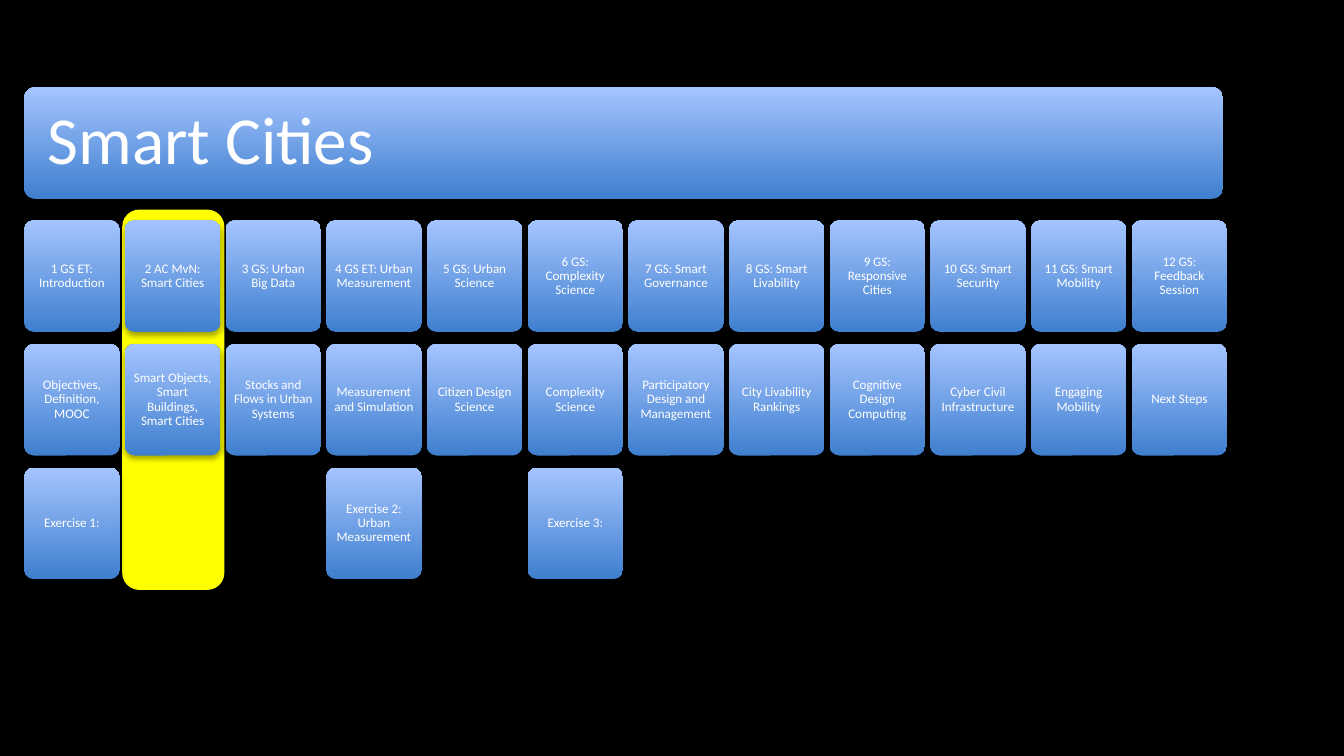
import pptx
import pptx.util
import pptx.dml.color
import pptx.enum.shapes
import pptx.enum.text
import pptx.oxml

Inches = pptx.util.Inches
Pt = pptx.util.Pt
RGBColor = pptx.dml.color.RGBColor
ALIGN = pptx.enum.text.PP_ALIGN

BLACK = RGBColor(0x00, 0x00, 0x00)
WHITE = RGBColor(0xFF, 0xFF, 0xFF)
YELLOW = RGBColor(0xFF, 0xFF, 0x00)
DEEP = RGBColor(0x3F, 0x7F, 0xCE)
PALE = RGBColor(0xA4, 0xC4, 0xFF)

TITLE = "Smart Cities"
# One entry per week: session, topic and, for some, an exercise
WEEKS = [
    ("1 GS ET: Introduction", "Objectives, Definition, MOOC", "Exercise 1:"),
    ("2 AC MvN: Smart Cities", "Smart Objects, Smart Buildings, Smart Cities"),
    ("3 GS: Urban Big Data", "Stocks and Flows in Urban Systems"),
    ("4 GS ET: Urban Measurement", "Measurement and Simulation",
     "Exercise 2: Urban Measurement"),
    ("5 GS: Urban Science", "Citizen Design Science"),
    ("6 GS: Complexity Science", "Complexity Science", "Exercise 3:"),
    ("7 GS: Smart Governance", "Participatory Design and Management"),
    ("8 GS: Smart Livability", "City Livability Rankings"),
    ("9 GS: Responsive Cities", "Cognitive Design Computing"),
    ("10 GS: Smart Security", "Cyber Civil Infrastructure"),
    ("11 GS: Smart Mobility", "Engaging Mobility"),
    ("12 GS: Feedback Session", "Next Steps"),
]

WIDE = 10
LEFT, RIGHT, TOP = 0.18, 9.13, 1.64
WIDTH, HEIGHT = 0.71, 0.83
STEP_X = (RIGHT - WIDTH - LEFT) / (len(WEEKS) - 1)
STEP_Y = 0.92

SHADOW = (
    '<a:outerShdw xmlns:a="http://schemas.openxmlformats.org/drawingml/2006/main"'
    f' blurRad="{Pt(3.1)}" dist="{Pt(1.8)}" dir="5400000" rotWithShape="0">'
    f'<a:srgbClr val="{BLACK}"><a:alpha val="35000"/></a:srgbClr></a:outerShdw>'
)


def add_card(slide, x, y, w, h):
    """Add a rounded box without outline and with a soft shadow below."""
    kind = pptx.enum.shapes.MSO_SHAPE.ROUNDED_RECTANGLE
    card = slide.shapes.add_shape(kind, Inches(x), Inches(y), Inches(w), Inches(h))
    card.line.fill.background()
    card.shadow.inherit = False
    card.element.spPr.effectLst.append(pptx.oxml.parse_xml(SHADOW))
    return card


def paint_blue(card):
    """Shade the card from pale at the top to deep at the bottom."""
    card.adjustments[0] = 0.1
    card.fill.gradient()
    card.fill.gradient_angle = 90
    for stop, color in zip(card.fill.gradient_stops, (DEEP, PALE)):
        stop.color.rgb = color


def write(card, text, size=7, align=ALIGN.CENTER, inset=0.03):
    frame = card.text_frame
    frame.word_wrap = True
    frame.vertical_anchor = pptx.enum.text.MSO_ANCHOR.MIDDLE
    frame.margin_left = frame.margin_right = Inches(inset)
    frame.margin_top = frame.margin_bottom = Inches(inset)
    para = frame.paragraphs[0]
    para.alignment = align
    para.line_spacing = 0.9
    run = para.add_run()
    run.text = text
    run.font.name = "Calibri"
    run.font.size = Pt(size)
    run.font.color.rgb = WHITE


def main():
    deck = pptx.Presentation()
    deck.slide_width, deck.slide_height = Inches(WIDE), Inches(WIDE * 9 / 16)
    slide = deck.slides.add_slide(deck.slide_layouts[6])
    slide.background.fill.solid()
    slide.background.fill.fore_color.rgb = BLACK

    marker = add_card(slide, 0.91, 1.56, 0.76, 2.83)
    marker.fill.solid()
    marker.fill.fore_color.rgb = YELLOW

    banner = add_card(slide, LEFT, 0.65, 8.92, HEIGHT)
    paint_blue(banner)
    write(banner, TITLE, size=36, align=ALIGN.LEFT, inset=0.15)

    for col, week in enumerate(WEEKS):
        for row, text in enumerate(week):
            card = add_card(slide, LEFT + col * STEP_X, TOP + row * STEP_Y,
                            WIDTH, HEIGHT)
            paint_blue(card)
            write(card, text)

    deck.save("out.pptx")


if __name__ == "__main__":
    main()
